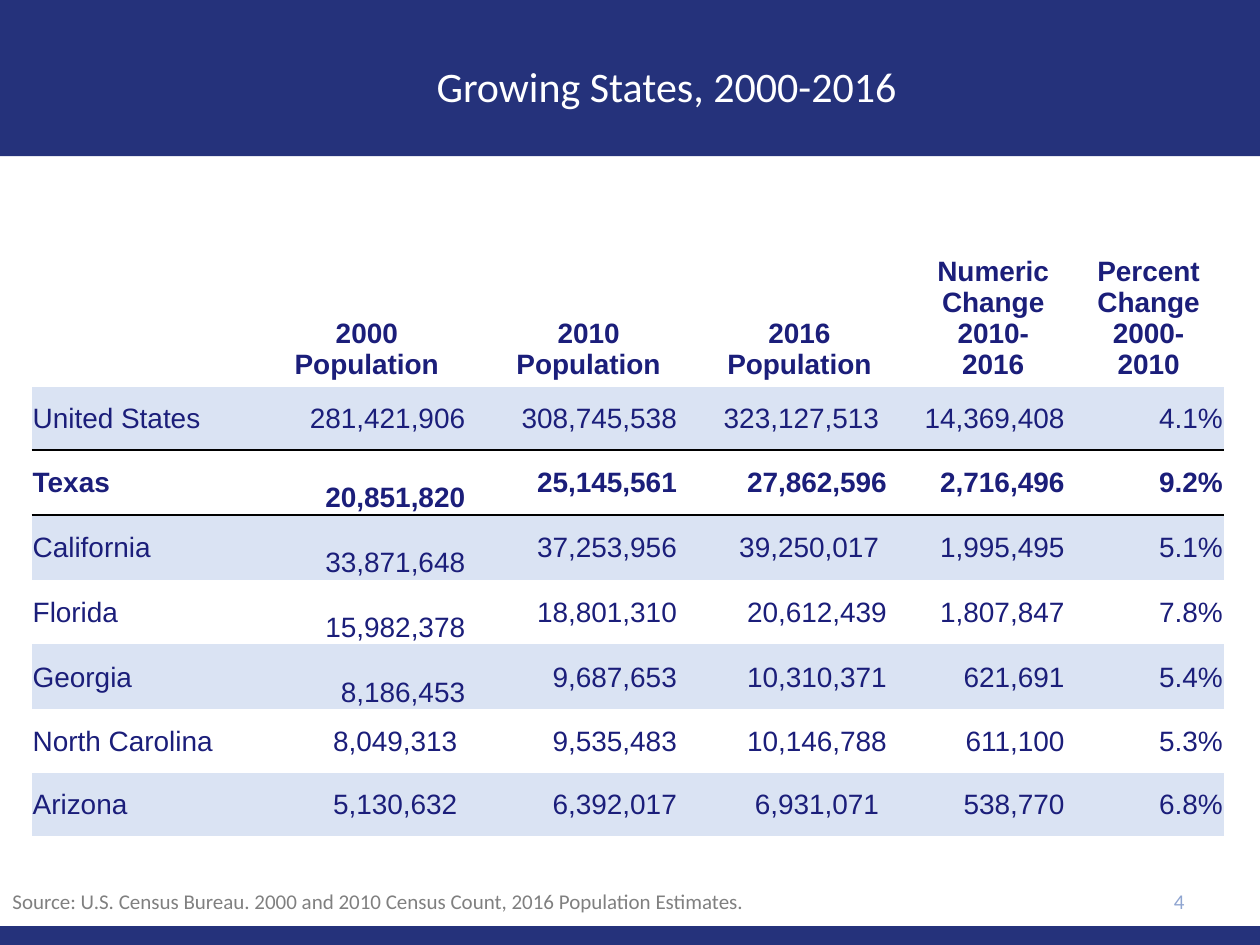
"""Build a slide with a table of growing states, 2000-2016."""
from dataclasses import dataclass

from lxml import etree
from pptx import Presentation
from pptx.dml.color import RGBColor
from pptx.enum import shapes, text
from pptx.oxml import ns
from pptx.util import Pt

HUES = {"navy": "25327B", "ink": "1B1E7A", "band": "DAE3F3", "rule": "000000",
        "white": "FFFFFF", "page": "8FA5D1", "grey": "808080"}
PLAIN = "{2D5ABB26-0587-4C30-8999-92F81FD0307C}"
LEFT, MID, RIGHT = text.PP_ALIGN.LEFT, text.PP_ALIGN.CENTER, text.PP_ALIGN.RIGHT
TOP, CENTER, BASE = (text.MSO_ANCHOR.TOP, text.MSO_ANCHOR.MIDDLE,
                     text.MSO_ANCHOR.BOTTOM)
WIDTHS = (116, 132.5, 121, 120, 101.5, 90.5)
HEAD, ROW = 103, 36.3
EDGE, DROP, NUDGE = 0.72, 17.8, 5.2


@dataclass
class Bar:
    top: float
    high: float


@dataclass
class Label:
    words: str
    box: tuple
    size: float
    hue: str
    align: int
    anchor: int
    lead: float = 1.0


@dataclass
class Head:
    words: str
    indent: float = 18.7


@dataclass
class State:
    name: str
    counts: tuple
    low: bool = False
    nudged: tuple = ()
    bold: bool = False


BARS = (Bar(0, 89.3), Bar(529.2, 10.8))
LABELS = (
    Label("Growing States, 2000-2016", (90, 23.8, 581.8, 54), 24, "white",
          MID, CENTER, 0.9),
    Label("4", (516.2, 500.4, 167.8, 28.8), 12, "page", RIGHT, CENTER),
    Label("Source: U.S. Census Bureau. 2000 and 2010 Census Count, "
          "2016 Population Estimates.", (0, 504, 630, 36), 12, "grey", LEFT, TOP),
)
HEADS = (
    Head("2000\nPopulation"), Head("2010\nPopulation"), Head("2016 Population"),
    Head("Numeric\nChange\n2010-2016"), Head("Percent\nChange\n2000-2010", 4.3),
)
STATES = (
    State("United States", ("281,421,906", "308,745,538", "323,127,513",
                            "14,369,408", "4.1%"), nudged=(3,)),
    State("Texas", ("20,851,820", "25,145,561", "27,862,596",
                    "2,716,496", "9.2%"), low=True, bold=True),
    State("California", ("33,871,648", "37,253,956", "39,250,017",
                         "1,995,495", "5.1%"), low=True, nudged=(3,)),
    State("Florida", ("15,982,378", "18,801,310", "20,612,439",
                      "1,807,847", "7.8%"), low=True),
    State("Georgia", ("8,186,453", "9,687,653", "10,310,371",
                      "621,691", "5.4%"), low=True),
    State("North Carolina", ("8,049,313", "9,535,483", "10,146,788",
                             "611,100", "5.3%"), nudged=(1,)),
    State("Arizona", ("5,130,632", "6,392,017", "6,931,071",
                      "538,770", "6.8%"), nudged=(1, 3)),
)


def color(hue: str) -> RGBColor:
    return RGBColor.from_string(HUES[hue])


def style(par, face: str, size: float, hue: str, align: int, bold=False) -> None:
    par.alignment = align
    font = par.font
    font.name, font.size, font.bold = face, Pt(size), bold
    font.color.rgb = color(hue)


def draw_bar(slide, bar: Bar) -> None:
    shape = slide.shapes.add_shape(shapes.MSO_SHAPE.RECTANGLE, 0, Pt(bar.top),
                                   Pt(720), Pt(bar.high))
    shape.shadow.inherit = False
    shape.fill.solid()
    shape.fill.fore_color.rgb = color("navy")
    shape.line.fill.background()


def draw_label(slide, label: Label) -> None:
    frame = slide.shapes.add_textbox(*map(Pt, label.box)).text_frame
    frame.word_wrap = True
    frame.vertical_anchor = label.anchor
    frame.text = label.words
    par = frame.paragraphs[0]
    par.line_spacing = label.lead
    style(par, "Calibri", label.size, label.hue, label.align)


def add_rule(cell, side: str) -> None:
    line = etree.Element(ns.qn(f"a:{side}"), w=str(Pt(1.5)))
    fill = etree.SubElement(line, ns.qn("a:solidFill"))
    etree.SubElement(fill, ns.qn("a:srgbClr"), val=HUES["rule"])
    cell._tc.get_or_add_tcPr().insert(0, line)


def fill_head(cell, head: Head) -> None:
    cell.vertical_anchor = BASE
    cell.text = head.words
    for par in cell.text_frame.paragraphs:
        par._p.get_or_add_pPr().set("marL", str(Pt(head.indent)))
        style(par, "Arial", 16, "ink", MID, True)


def fill_cell(cell, state: State, col: int, words: str, band: bool) -> None:
    cell.vertical_anchor = CENTER
    cell.margin_left = Pt(EDGE)
    cell.margin_right = Pt(NUDGE if col in state.nudged else EDGE)
    cell.margin_top = Pt(DROP if state.low and col == 1 else EDGE)
    cell.margin_bottom = 0
    cell.text = words
    style(cell.text_frame.paragraphs[0], "Arial", 16, "ink",
          RIGHT if col else LEFT, state.bold)
    if band:
        cell.fill.solid()
        cell.fill.fore_color.rgb = color("band")
    else:
        cell.fill.background()


def draw_table(slide) -> None:
    grid = slide.shapes.add_table(
        len(STATES) + 1, len(WIDTHS), Pt(18), Pt(118), Pt(sum(WIDTHS)),
        Pt(HEAD + ROW * len(STATES))).table
    grid.first_row = grid.horz_banding = False
    grid._tbl.tblPr.find(ns.qn("a:tableStyleId")).text = PLAIN
    for col, width in zip(grid.columns, WIDTHS):
        col.width = Pt(width)
    for num, row in enumerate(grid.rows):
        row.height = Pt(ROW if num else HEAD)
    for cell in grid.rows[0].cells:
        cell.fill.background()
    for col, head in enumerate(HEADS, 1):
        fill_head(grid.cell(0, col), head)
    for row, state in enumerate(STATES, 1):
        for col, words in enumerate((state.name, *state.counts)):
            fill_cell(grid.cell(row, col), state, col, words, row % 2 == 1)
    for col in range(len(WIDTHS)):
        add_rule(grid.cell(1, col), "lnB")
        add_rule(grid.cell(2, col), "lnT")


def main() -> None:
    deck = Presentation()
    deck.slide_width, deck.slide_height = Pt(720), Pt(540)
    slide = deck.slides.add_slide(deck.slide_layouts[6])
    for bar in BARS:
        draw_bar(slide, bar)
    for label in LABELS:
        draw_label(slide, label)
    draw_table(slide)
    deck.save("out.pptx")


if __name__ == "__main__":
    main()
